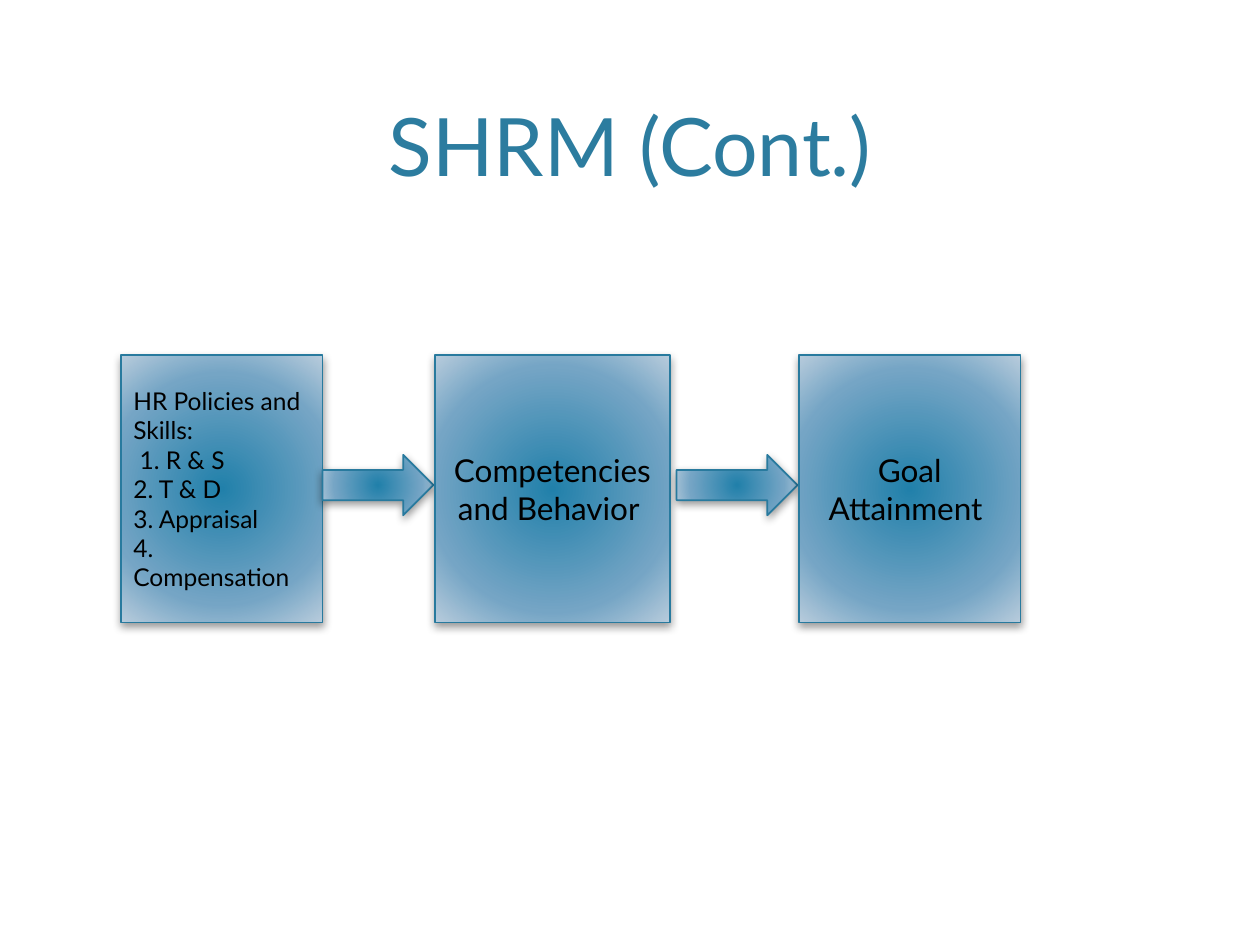
from dataclasses import dataclass

from lxml import etree
from pptx import Presentation
from pptx.dml.color import RGBColor
from pptx.enum.shapes import MSO_SHAPE
from pptx.enum.text import MSO_ANCHOR, PP_ALIGN
from pptx.oxml import parse_xml
from pptx.oxml.ns import nsdecls, qn
from pptx.util import Inches, Pt

RECTANGLE = MSO_SHAPE.RECTANGLE
RIGHT_ARROW = MSO_SHAPE.RIGHT_ARROW
LEFT, CENTER = PP_ALIGN.LEFT, PP_ALIGN.CENTER
MIDDLE, BOTTOM = MSO_ANCHOR.MIDDLE, MSO_ANCHOR.BOTTOM


@dataclass(frozen=True)
class Theme:
    font: str = "Lato"
    title: str = "2C7C9F"
    text: str = "000000"
    outline: str = "287A9E"
    shadow: str = "000000"
    gradient: tuple = ((0, "2180AA"), (69, "75A5C5"), (100, "B8CCDC"))
    title_size: int = 46
    list_size: int = 14
    box_size: int = 18


THEME = Theme()

BOX_TOP, BOX_HEIGHT = 2.82, 2.12
ARROW_TOP, ARROW_HEIGHT = 3.61, 0.48

# Left, width, lines, type size, alignment
BOXES = (
    (0.96, 1.6, ("HR Policies and Skills:", " 1. R & S", "2. T & D",
                 "3. Appraisal", "4. Compensation"), THEME.list_size, LEFT),
    (3.45, 1.87, ("Competencies and Behavior ",), THEME.box_size, CENTER),
    (6.34, 1.76, ("Goal Attainment ",), THEME.box_size, CENTER),
)
# Left, width
ARROWS = ((2.56, 0.88), (5.37, 0.96))


def write_text(shape, lines, size, color, alignment, anchor):
    frame = shape.text_frame
    frame.word_wrap = True
    frame.vertical_anchor = anchor
    frame.text = "\n".join(lines)
    for paragraph in frame.paragraphs:
        paragraph.alignment = alignment
        paragraph.font.name = THEME.font
        paragraph.font.size = Pt(size)
        paragraph.font.color.rgb = RGBColor.from_string(color)


def add_title(slide, text):
    title = slide.shapes.add_textbox(
        Inches(0.6), Inches(0.12), Inches(8.8), Inches(1.46))
    write_text(title, [text], THEME.title_size, THEME.title, CENTER, BOTTOM)


def add_radial_fill(shape):
    stops = "".join(
        f'<a:gs pos="{position * 1000}"><a:srgbClr val="{color}"/></a:gs>'
        for position, color in THEME.gradient)
    gradient = parse_xml(
        f'<a:gradFill {nsdecls("a")} rotWithShape="1"><a:gsLst>{stops}</a:gsLst>'
        '<a:path path="circle"><a:fillToRect l="100000" t="100000" '
        'r="100000" b="100000"/></a:path></a:gradFill>')
    shape.element.spPr.find(qn("a:prstGeom")).addnext(gradient)


def add_soft_shadow(shape):
    shape.shadow.inherit = False
    effects = shape.element.spPr.find(qn("a:effectLst"))
    shadow = etree.SubElement(
        effects, qn("a:outerShdw"), blurRad=str(Pt(5)), dist=str(Pt(2)),
        dir="5400000", rotWithShape="0")
    color = etree.SubElement(shadow, qn("a:srgbClr"), val=THEME.shadow)
    etree.SubElement(color, qn("a:alpha"), val="40000")


def add_glossy_shape(slide, kind, left, top, width, height):
    shape = slide.shapes.add_shape(
        kind, Inches(left), Inches(top), Inches(width), Inches(height))
    shape.line.color.rgb = RGBColor.from_string(THEME.outline)
    shape.line.width = Pt(1)
    add_radial_fill(shape)
    add_soft_shadow(shape)
    return shape


def add_box(slide, left, width, lines, size, alignment):
    box = add_glossy_shape(slide, RECTANGLE, left, BOX_TOP, width, BOX_HEIGHT)
    write_text(box, lines, size, THEME.text, alignment, MIDDLE)


def add_arrow(slide, left, width):
    add_glossy_shape(slide, RIGHT_ARROW, left, ARROW_TOP, width, ARROW_HEIGHT)


def main():
    presentation = Presentation()
    presentation.slide_width = Inches(10)
    presentation.slide_height = Inches(7.5)
    slide = presentation.slides.add_slide(presentation.slide_layouts[6])

    add_title(slide, "SHRM (Cont.)")

    # Process flow: each arrow lies above the box it leaves
    for index, box in enumerate(BOXES):
        add_box(slide, *box)
        if index < len(ARROWS):
            add_arrow(slide, *ARROWS[index])

    presentation.save("out.pptx")


if __name__ == "__main__":
    main()
